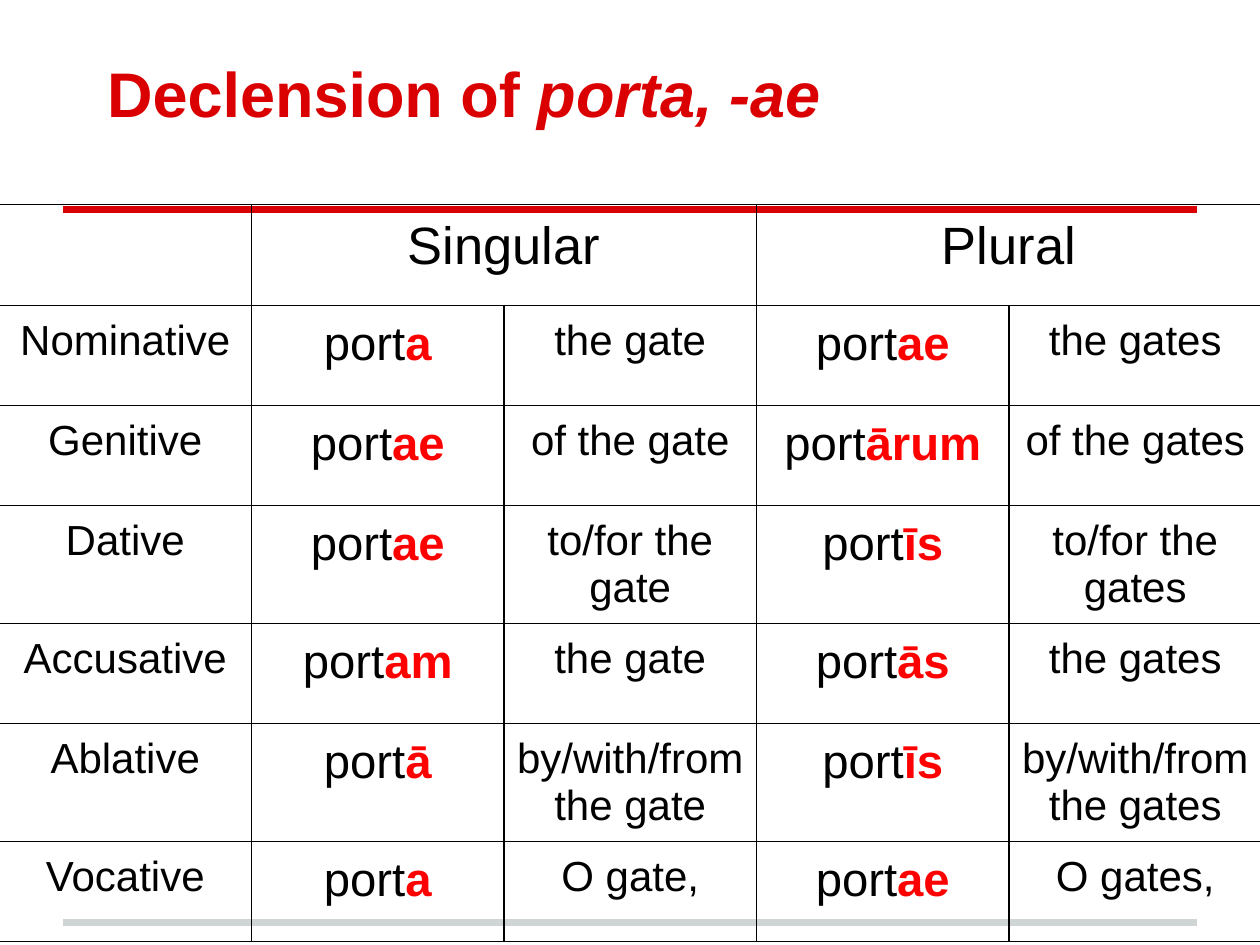
"""Build a slide with the declension table of a Latin noun."""
from lxml import etree
from pptx import Presentation
from pptx.dml.color import RGBColor
from pptx.enum.shapes import MSO_CONNECTOR
from pptx.enum.text import MSO_ANCHOR, PP_ALIGN
from pptx.oxml.ns import qn
from pptx.util import Cm, Pt

STRAIGHT = MSO_CONNECTOR.STRAIGHT
BOTTOM = MSO_ANCHOR.BOTTOM
CENTER = PP_ALIGN.CENTER

CRIMSON = RGBColor(0xDA, 0x00, 0x02)
SILVER = RGBColor(0xCF, 0xD4, 0xD4)
RED = RGBColor(0xFF, 0x00, 0x00)
BLACK = RGBColor(0x00, 0x00, 0x00)

FONT = "Arial"
STEM = "port"
TITLE = ("Declension of ", "porta, -ae")
NUMBERS = {1: "Singular", 3: "Plural"}
CASES = [
    ("Nominative", "a", "the gate", "ae", "the gates"),
    ("Genitive", "ae", "of the gate", "ārum", "of the gates"),
    ("Dative", "ae", "to/for the gate", "īs", "to/for the gates"),
    ("Accusative", "am", "the gate", "ās", "the gates"),
    ("Ablative", "ā", "by/with/from the gate", "īs", "by/with/from the gates"),
    ("Vocative", "a", "O gate,", "ae", "O gates,"),
]
ENDING_COLUMNS = (1, 3)
RULES = [(18.59, SILVER), (4.22, CRIMSON)]

COLUMN_WIDTH = Cm(5.09)
ROW_HEIGHT = Cm(2.02)
MARGIN = Cm(0.25)
CELL_BOTTOM_MARGIN = Cm(0.09)


def add_span(para, text, size, color, bold=False, italic=False):
    span = para.add_run()
    span.text = text
    font = span.font
    font.name, font.size = FONT, Pt(size)
    font.bold, font.italic = bold, italic
    font.color.rgb = color


def add_rule(page, top, color):
    rule = page.shapes.add_connector(STRAIGHT, Cm(1.27), Cm(top), Cm(24.13), Cm(top))
    rule.line.color.rgb = color
    rule.line.width = Pt(4)
    etree.SubElement(rule._element.spPr, qn("a:effectLst"))


def add_title(page):
    box = page.shapes.add_textbox(Cm(1.27), Cm(-0.3), Cm(22.86), Cm(3.18))
    frame = box.text_frame
    frame.word_wrap = True
    frame.vertical_anchor = BOTTOM
    frame.margin_left = Cm(0.89)
    frame.margin_right = frame.margin_top = frame.margin_bottom = MARGIN
    lead, noun = TITLE
    add_span(frame.paragraphs[0], lead, 36, CRIMSON, bold=True)
    add_span(frame.paragraphs[0], noun, 36, CRIMSON, bold=True, italic=True)


def style_cell(cell):
    cell.fill.background()
    cell.margin_left = cell.margin_right = cell.margin_top = MARGIN
    cell.margin_bottom = CELL_BOTTOM_MARGIN
    cell.text_frame.paragraphs[0].alignment = CENTER
    properties = cell._tc.get_or_add_tcPr()
    for position, side in enumerate(("lnL", "lnR", "lnT", "lnB")):
        border = etree.Element(qn(f"a:{side}"), w=str(Pt(0.75)))
        fill = etree.SubElement(border, qn("a:solidFill"))
        etree.SubElement(fill, qn("a:srgbClr"), val=str(BLACK))
        properties.insert(position, border)


def add_declension(page):
    row_count, column_count = len(CASES) + 1, len(CASES[0])
    table = page.shapes.add_table(
        row_count, column_count, Cm(-0.02), Cm(4.13),
        COLUMN_WIDTH * column_count, ROW_HEIGHT * row_count).table
    table.first_row = table.horz_banding = False
    for column in table.columns:
        column.width = COLUMN_WIDTH
    for row in table.rows:
        row.height = ROW_HEIGHT
        for cell in row.cells:
            style_cell(cell)
    for index, number in NUMBERS.items():
        heading = table.cell(0, index)
        heading.merge(table.cell(0, index + 1))
        add_span(heading.text_frame.paragraphs[0], number, 30, BLACK)
    for row_index, entries in enumerate(CASES, start=1):
        for column_index, entry in enumerate(entries):
            para = table.cell(row_index, column_index).text_frame.paragraphs[0]
            if column_index in ENDING_COLUMNS:
                add_span(para, STEM, 27, BLACK)
                add_span(para, entry, 27, RED, bold=True)
            else:
                add_span(para, entry, 24, BLACK)


def main():
    deck = Presentation()
    deck.slide_width, deck.slide_height = Cm(25.4), Cm(19.05)
    page = deck.slides.add_slide(deck.slide_layouts[6])
    for top, color in RULES:
        add_rule(page, top, color)
    add_title(page)
    add_declension(page)
    deck.save("out.pptx")


if __name__ == "__main__":
    main()
